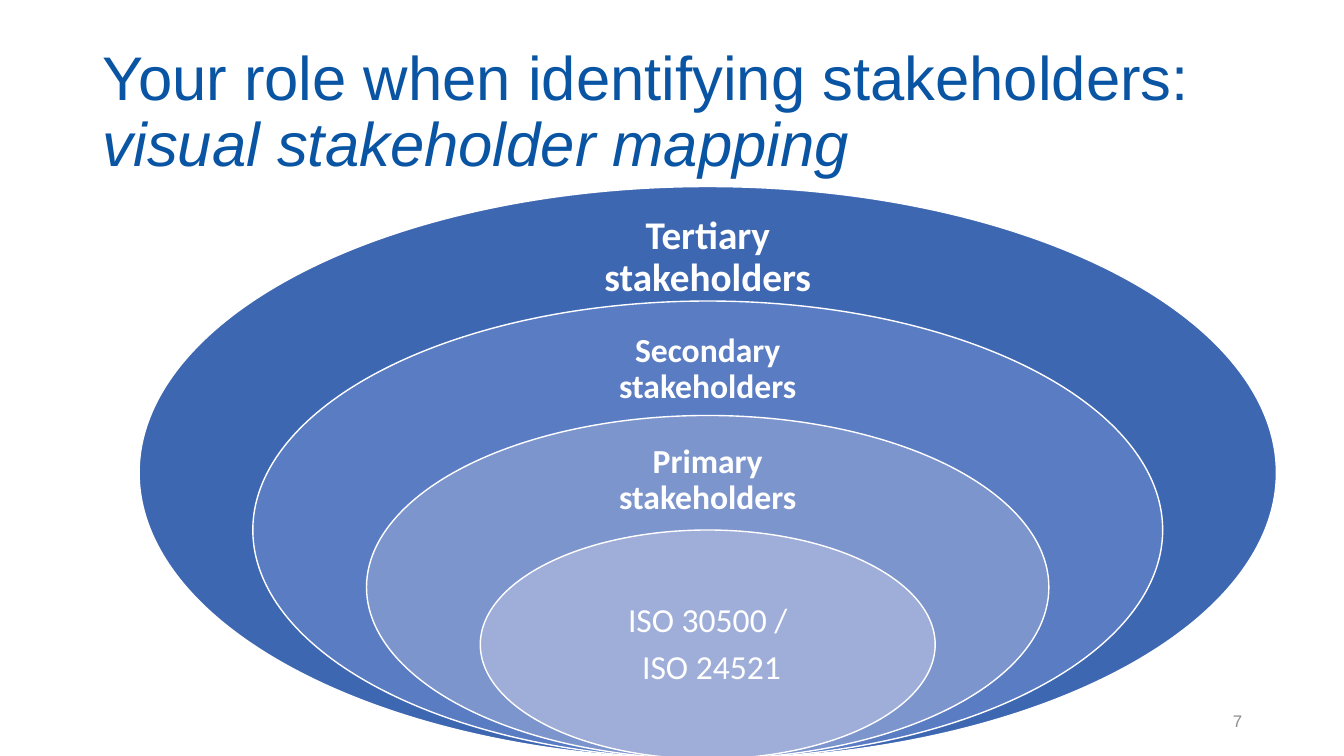
from dataclasses import dataclass

from pptx import Presentation
from pptx.dml.color import RGBColor
from pptx.enum.shapes import MSO_SHAPE as Preset
from pptx.enum.text import MSO_ANCHOR as Anchor, PP_ALIGN as Align
from pptx.slide import Slide
from pptx.text.text import Font, TextFrame
from pptx.util import Inches, Pt

SLIDE_WIDTH = Inches(13.33)
SLIDE_HEIGHT = Inches(7.5)

TITLE_BLUE = RGBColor(0x0A, 0x55, 0xA3)
NUMBER_GREY = RGBColor(0x8C, 0x8C, 0x8C)
WHITE = RGBColor(0xFF, 0xFF, 0xFF)
TERTIARY_BLUE = RGBColor(0x3E, 0x67, 0xB2)
SECONDARY_BLUE = RGBColor(0x5A, 0x7C, 0xC3)
PRIMARY_BLUE = RGBColor(0x7D, 0x95, 0xCD)
CORE_BLUE = RGBColor(0x9F, 0xAE, 0xD8)

MAP_CENTER = 52.66
MAP_BOTTOM = 100.4
MAP_WIDTH = 84.62
MAP_HEIGHT = 75.73
RING_STEP = 0.2
LABEL_WIDTH = 23.63
INSET_PER_POINT = 0.57
LABEL_GAP = 8


@dataclass(frozen=True)
class Area:
    """Percentages of the slide's width and height."""

    left: float
    top: float
    width: float
    height: float

    def box(self) -> tuple[int, int, int, int]:
        return (
            int(SLIDE_WIDTH * self.left / 100),
            int(SLIDE_HEIGHT * self.top / 100),
            int(SLIDE_WIDTH * self.width / 100),
            int(SLIDE_HEIGHT * self.height / 100),
        )


@dataclass(frozen=True)
class Ring:
    lines: tuple[str, ...]
    fill: RGBColor
    label_middle: float
    label_height: float
    size: int = 24
    bold: bool = True


TITLE_AREA = Area(6.9, 5.33, 86.27, 19.33)
NUMBER_AREA = Area(70.67, 92.67, 22.5, 5.33)
RINGS = (
    Ring(("Tertiary stakeholders",), TERTIARY_BLUE, 34.07, 11.33, size=28),
    Ring(("Secondary stakeholders",), SECONDARY_BLUE, 48.93, 10.93),
    Ring(("Primary stakeholders",), PRIMARY_BLUE, 63.53, 10.27),
    Ring(("ISO 30500 /", " ISO 24521"), CORE_BLUE, 85.33, 15.2, bold=False),
)


def style_font(font: Font, name: str, size: int, color: RGBColor) -> None:
    font.name = name
    font.size = Pt(size)
    font.color.rgb = color


def add_text_frame(slide: Slide, area: Area) -> TextFrame:
    frame = slide.shapes.add_textbox(*area.box()).text_frame
    frame.word_wrap = True
    frame.vertical_anchor = Anchor.MIDDLE
    return frame


def add_title(slide: Slide) -> None:
    paragraph = add_text_frame(slide, TITLE_AREA).paragraphs[0]
    paragraph.line_spacing = 0.9
    style_font(paragraph.font, "Arial", 44, TITLE_BLUE)
    paragraph.add_run().text = "Your role when identifying stakeholders:"
    paragraph.add_line_break()
    subtitle = paragraph.add_run()
    subtitle.text = "visual stakeholder mapping"
    subtitle.font.italic = True


def add_slide_number(slide: Slide) -> None:
    paragraph = add_text_frame(slide, NUMBER_AREA).paragraphs[0]
    paragraph.text = "7"
    paragraph.alignment = Align.RIGHT
    style_font(paragraph.font, "Arial", 12, NUMBER_GREY)


def add_ellipse(slide: Slide, ring: Ring, scale: float) -> None:
    width, height = MAP_WIDTH * scale, MAP_HEIGHT * scale
    area = Area(MAP_CENTER - width / 2, MAP_BOTTOM - height, width, height)
    shape = slide.shapes.add_shape(Preset.OVAL, *area.box())
    shape.shadow.inherit = False
    shape.fill.solid()
    shape.fill.fore_color.rgb = ring.fill
    shape.line.color.rgb = WHITE
    shape.line.width = Pt(1)


def add_label(slide: Slide, ring: Ring) -> None:
    frame = add_text_frame(slide, Area(
        MAP_CENTER - LABEL_WIDTH / 2,
        ring.label_middle - ring.label_height / 2,
        LABEL_WIDTH,
        ring.label_height,
    ))
    inset = Pt(ring.size * INSET_PER_POINT)
    frame.margin_left = frame.margin_right = inset
    frame.margin_top = frame.margin_bottom = inset
    frame.text = "\n".join(ring.lines)
    for paragraph in frame.paragraphs:
        paragraph.alignment = Align.CENTER
        paragraph.line_spacing = 0.9
        paragraph.space_after = Pt(LABEL_GAP)
        style_font(paragraph.font, "Calibri", ring.size, WHITE)
        paragraph.font.bold = ring.bold


def main() -> None:
    presentation = Presentation()
    presentation.slide_width = SLIDE_WIDTH
    presentation.slide_height = SLIDE_HEIGHT
    slide = presentation.slides.add_slide(presentation.slide_layouts[6])
    add_title(slide)
    add_slide_number(slide)
    for index, ring in enumerate(RINGS):
        add_ellipse(slide, ring, 1 - RING_STEP * index)
        add_label(slide, ring)
    presentation.save("out.pptx")


if __name__ == "__main__":
    main()
